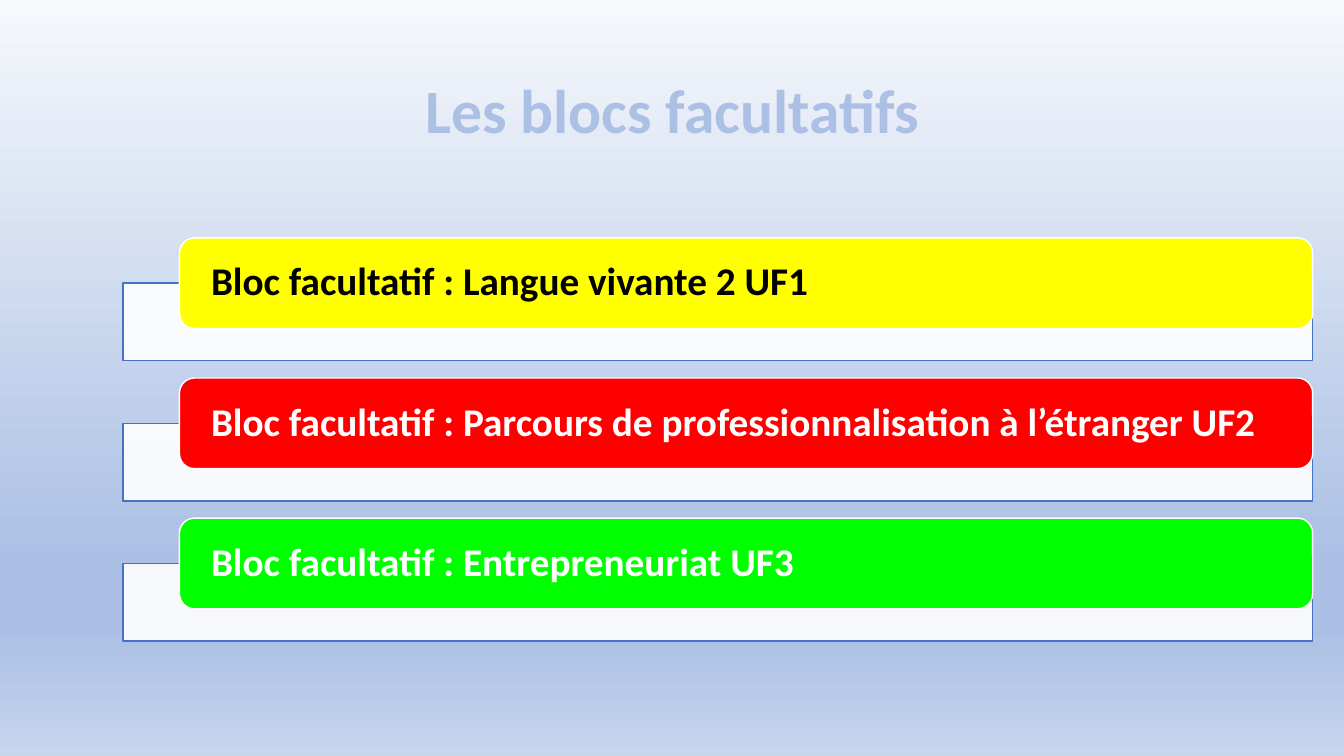
from lxml.etree import SubElement
from pptx import Presentation
from pptx.dml.color import RGBColor
from pptx.enum.shapes import MSO_SHAPE
from pptx.enum.text import MSO_ANCHOR, PP_ALIGN
from pptx.oxml.ns import qn
from pptx.util import Inches, Pt

HUES = {
    "pale": "F6F8FC", "sky": "ABC0E4", "mist": "C7D5ED", "edge": "4472C4",
    "white": "FFFFFF", "black": "000000",
    "yellow": "FFFF00", "red": "FF0000", "green": "00FF00",
}
STOPS = [(0, "pale"), (74, "sky"), (83, "sky"), (100, "mist")]
BLOCKS = [
    ("Bloc facultatif : Langue vivante 2 UF1", "yellow", "black"),
    ("Bloc facultatif : Parcours de professionnalisation à l’étranger UF2", "red", "white"),
    ("Bloc facultatif : Entrepreneuriat UF3", "green", "white"),
]


def rgb(name):
    return RGBColor.from_string(HUES[name])


def write(shape, text, size, hue, align=PP_ALIGN.LEFT, inset=0.1, after=0):
    frame = shape.text_frame
    frame.word_wrap = True
    frame.vertical_anchor = MSO_ANCHOR.MIDDLE
    frame.margin_left = frame.margin_right = Inches(inset)
    frame.margin_top = frame.margin_bottom = 0
    para = frame.paragraphs[0]
    para.alignment = align
    para.line_spacing = 0.9
    para.space_after = Pt(after)
    run = para.add_run()
    run.text = text
    run.font.name = "Calibri"
    run.font.size = Pt(size)
    run.font.bold = True
    run.font.color.rgb = rgb(hue)


def draw(slide, kind, box, fill, line):
    shape = slide.shapes.add_shape(kind, *map(Inches, box))
    shape.shadow.inherit = False
    shape.fill.solid()
    shape.fill.fore_color.rgb = rgb(fill)
    shape.line.color.rgb = rgb(line)
    shape.line.width = Pt(1)
    return shape


def paint(slide):
    fill = slide.background.fill
    fill.gradient()
    fill.gradient_angle = 270
    stops = slide.element.find(".//" + qn("a:gsLst"))
    for stop in list(stops):
        stops.remove(stop)
    for place, hue in STOPS:
        stop = SubElement(stops, qn("a:gs"), pos=str(place * 1000))
        SubElement(stop, qn("a:srgbClr"), val=HUES[hue])


def add_title(slide, box):
    title = slide.shapes.add_textbox(*map(Inches, box))
    write(title, "Les blocs facultatifs", 44, "sky", align=PP_ALIGN.CENTER)


def add_block(slide, box, text, fill, hue):
    left, top, width, height = box
    tray = draw(slide, MSO_SHAPE.RECTANGLE,
                (left, top + 0.45, width, height - 0.45), "white", "edge")
    color = tray.fill._xPr.find(".//" + qn("a:srgbClr"))
    SubElement(color, qn("a:alpha"), val="90000")
    bar = draw(slide, MSO_SHAPE.ROUNDED_RECTANGLE,
               (left + 0.56, top, width - 0.56, 0.9), fill, "white")
    write(bar, text, 28, hue, inset=0.27)


def add_list(slide, box):
    left, top, width, height = box
    step = 1.39
    for i, block in enumerate(BLOCKS):
        tall = height - step * (len(BLOCKS) - 1)
        add_block(slide, (left, top + i * step, width, tall), *block)


def main():
    deck = Presentation()
    deck.slide_width = Inches(13.33)
    deck.slide_height = Inches(7.5)
    slide = deck.slides.add_slide(deck.slide_layouts[6])
    paint(slide)
    add_title(slide, (0.92, 0.4, 11.5, 1.45))
    add_list(slide, (1.22, 2.36, 11.8, 4))
    deck.save("out.pptx")


if __name__ == "__main__":
    main()
